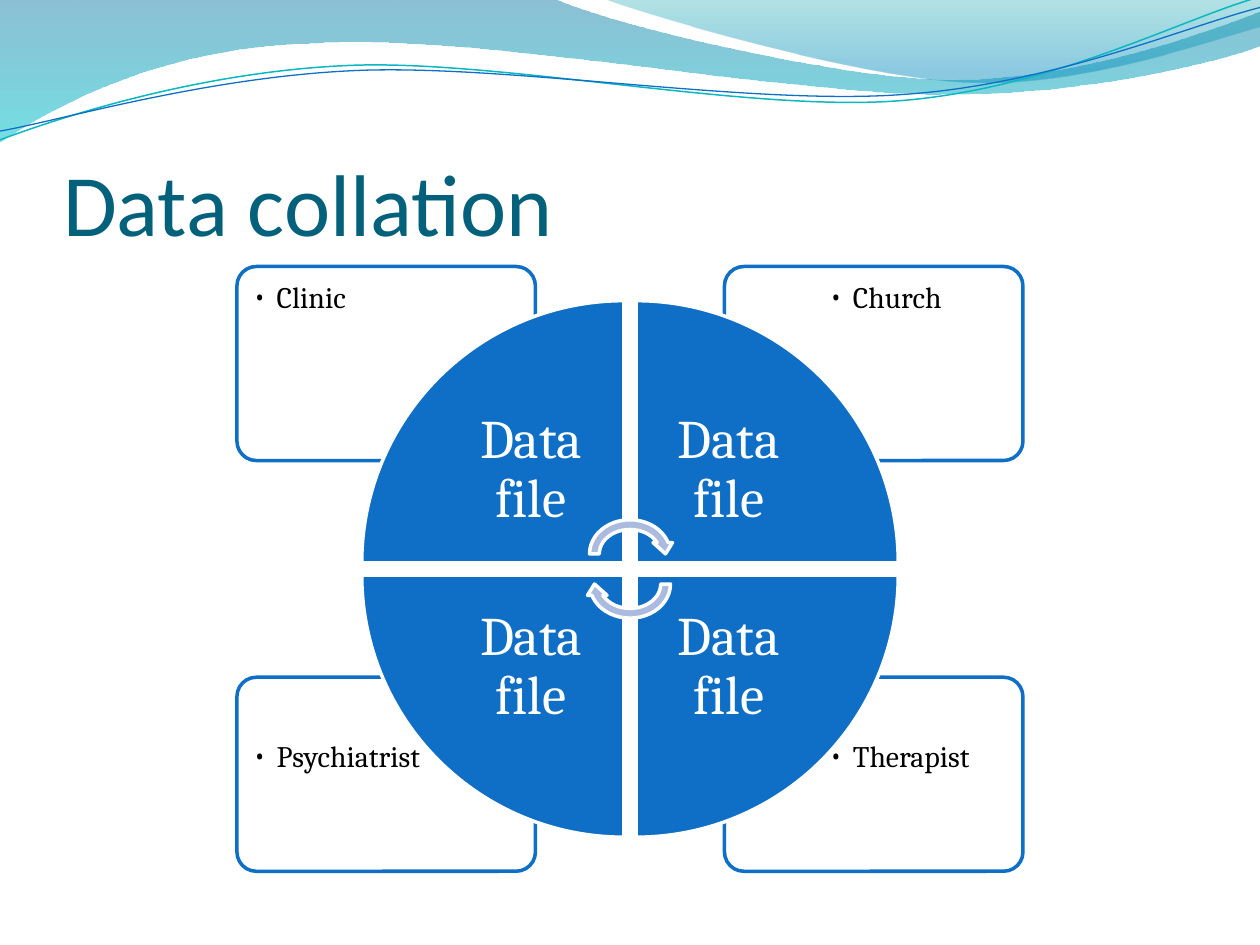
from math import cos, radians, sin

from lxml.etree import SubElement as add_element
from pptx import Presentation
from pptx.dml.color import RGBColor
from pptx.enum.shapes import MSO_SHAPE as Shape
from pptx.enum.text import MSO_ANCHOR as Anchor, PP_ALIGN as Align
from pptx.oxml.ns import qn
from pptx.util import Pt

COLORS = {
    "title": "04617B", "blue": "0F6FC6", "teal": "0AB8BF", "arrow": "ABBBDF",
    "white": "FFFFFF", "black": "000000", "deep": "0074A1", "aqua": "00C6CF",
    "sea": "00A1A9", "sky": "008BBF",
}
TITLE = "Data collation"
WEDGE_TEXT = "Data file"
QUADRANTS = [
    ("Therapist", 1, 1, 180),
    ("Psychiatrist", -1, 1, 270),
    ("Church", 1, -1, 90),
    ("Clinic", -1, -1, 0),
]
CENTER = (360, 325.1)
BOX = {"gap": (54, 61.9), "size": (170.6, 110.9)}
LABEL = {"gap": (107.4, 92.3), "size": (114.5, 77.8)}
WEDGE = {"gap": (3.5, 3.5), "size": (149.8, 149.8)}
WEDGE_LABEL = {"gap": (3.5, 3.5), "size": (105.8, 105.8)}
ARROW_SIZE, ARROW_SHIFT = (51.8, 44.6), 8.6

WAVES = [
    {"start": (0, 0), "steps": [
        (316.8, -0.7), (342.7, 12.2, 478.1, 45.4, 545.8, 45.4),
        (614.2, 45.4, 689.8, 18.7, 720, 6.5), (720.7, 25.9),
        (707.8, 31.7, 626.4, 54.7, 537.1, 54), (447.8, 54, 275, 20.2, 185, 24.5),
        (92.9, 25.9, 33.1, 59.8, -0.7, 81.4)],
     "stops": [(0, "deep", 45), (1, "aqua", 55)]},
    {"start": (344.9, -0.7), "steps": [
        (366.5, 7.9, 491, 44.6, 553.7, 46.8), (616.3, 49.7, 691.9, 23, 720, 15.1), (720, 0)],
     "stops": [(0, "sea", 30), (0.8, "sky", 45)]},
    {"start": (0, 79.9), "steps": [
        (34.6, 67, 113.8, 41, 199.4, 37.4), (284.4, 33.8, 427, 64.1, 513.4, 57.6),
        (599.8, 51.1, 675.4, 10.8, 718.6, -1.4)],
     "line": ("teal", 0.85), "pivot": (359.3, 41.4), "tilt": -2.7},
    {"start": (0, 74.9), "steps": [
        (33.8, 69.1, 118.1, 43.9, 203.8, 40.3), (290.2, 36.7, 429.8, 60.5, 516.2, 54),
        (601.9, 48.2, 677.5, 15.1, 720, 4.3)],
     "line": ("blue", 0.75), "pivot": (359.6, 42.5), "tilt": -2.7},
]


def color(name):
    return RGBColor.from_string(COLORS[name])


def set_values(target, values):
    for name, value in values.items():
        setattr(target, name, value)


def set_alpha(holder, percent):
    for node in holder.iter(qn("a:srgbClr")):
        add_element(node, qn("a:alpha")).set("val", str(percent * 1000))


def turn(point, pivot, degrees):
    angle = radians(degrees)
    x, y = (value - middle for value, middle in zip(point, pivot))
    return (pivot[0] + x * cos(angle) - y * sin(angle),
            pivot[1] + x * sin(angle) + y * cos(angle))


def bend_segments(shape, steps):
    segments = iter(list(shape._element.spPr.iter(qn("a:lnTo"))))
    for step in steps:
        first, *others = [next(segments) for _ in range(len(step) // 2)]
        if others:
            first.tag = qn("a:cubicBezTo")
            for other in others:
                first.append(other[0])
                other.getparent().remove(other)


def add_wave(page, wave):
    tilt = wave.get("tilt", 0)
    flat = [*wave["start"], *(value for step in wave["steps"] for value in step)]
    points = [turn(point, wave.get("pivot", (0, 0)), -tilt)
              for point in zip(flat[::2], flat[1::2])]
    points = [(Pt(x), Pt(y)) for x, y in points]
    builder = page.shapes.build_freeform(*points[0])
    builder.add_line_segments(points[1:], close="stops" in wave)
    shape = builder.convert_to_shape()
    bend_segments(shape, wave["steps"])
    shape.rotation = tilt
    shape.shadow.inherit = False
    if "line" in wave:
        name, width = wave["line"]
        shape.fill.background()
        shape.line.color.rgb = color(name)
        shape.line.width = Pt(width)
        return
    shape.line.fill.background()
    shape.fill.gradient()
    shape.fill.gradient_angle = 270
    nodes = shape._element.spPr.iter(qn("a:gs"))
    for stop, node, (position, name, alpha) in zip(shape.fill.gradient_stops, nodes, wave["stops"]):
        stop.position = position
        stop.color.rgb = color(name)
        set_alpha(node, alpha)


def quadrant_frame(part, signs):
    starts = [c + g if s > 0 else c - g - size
              for c, g, size, s in zip(CENTER, part["gap"], part["size"], signs)]
    return [Pt(value) for value in (*starts, *part["size"])]


def add_preset(page, kind, frame, fill, line, rotation=0):
    shape = page.shapes.add_shape(kind, *frame)
    shape.shadow.inherit = False
    shape.rotation = rotation
    shape.fill.solid()
    shape.fill.fore_color.rgb = color(fill)
    shape.line.color.rgb = color(line)
    shape.line.width = Pt(2)
    return shape


def write_text(box, text, font, frame_format, para_format):
    frame = box.text_frame
    set_values(frame, {"word_wrap": True, **frame_format})
    para = frame.paragraphs[0]
    set_values(para, para_format)
    span = para.add_run()
    span.text = text
    name, size, ink = font
    set_values(span.font, {"name": name, "size": Pt(size)})
    span.font.color.rgb = color(ink)
    return para


def margins(size):
    return {f"margin_{side}": Pt(size) for side in ("left", "top", "right", "bottom")}


def add_bullet(para):
    props = para._p.get_or_add_pPr()
    props.set("marL", str(Pt(13.5)))
    props.set("indent", str(-Pt(13.5)))
    add_element(props, qn("a:buFont")).set("typeface", "Cambria")
    add_element(props, qn("a:buChar")).set("char", "•")


def main():
    """Build the data collation slide."""
    deck = Presentation()
    set_values(deck, {"slide_width": Pt(720), "slide_height": Pt(540)})
    page = deck.slides.add_slide(deck.slide_layouts[5])
    for wave in WAVES:
        add_wave(page, wave)

    title = page.shapes.title
    set_values(title, {"left": Pt(36), "top": Pt(55.4), "width": Pt(648), "height": Pt(90)})
    write_text(title, TITLE, ("Calibri", 50, "title"),
               {**margins(0), "margin_top": Pt(3.6), "vertical_anchor": Anchor.BOTTOM},
               {"alignment": Align.LEFT})

    for text, *signs, _ in QUADRANTS:
        box = add_preset(page, Shape.ROUNDED_RECTANGLE, quadrant_frame(BOX, signs), "white", "blue")
        box.adjustments[0] = 0.1
        set_alpha(box._element.spPr.find(qn("a:solidFill")), 90)
        label = page.shapes.add_textbox(*quadrant_frame(LABEL, signs))
        add_bullet(write_text(label, text, ("Cambria", 17, "black"),
                              margins(6.5), {"level": 1, "line_spacing": 0.9}))

    for _, *signs, rotation in reversed(QUADRANTS):
        add_preset(page, Shape.PIE_WEDGE, quadrant_frame(WEDGE, signs), "blue", "white", rotation)
        label = page.shapes.add_textbox(*quadrant_frame(WEDGE_LABEL, signs))
        write_text(label, WEDGE_TEXT, ("Cambria", 31, "white"),
                   {**margins(17.3), "vertical_anchor": Anchor.MIDDLE},
                   {"alignment": Align.CENTER, "line_spacing": 0.9})

    width, height = ARROW_SIZE
    for sign, rotation in ((-1, 0), (1, 180)):
        frame = (CENTER[0] - width / 2, CENTER[1] + sign * ARROW_SHIFT - height / 2, width, height)
        add_preset(page, Shape.CIRCULAR_ARROW, [Pt(value) for value in frame],
                   "arrow", "white", rotation)

    deck.save("out.pptx")


if __name__ == "__main__":
    main()
